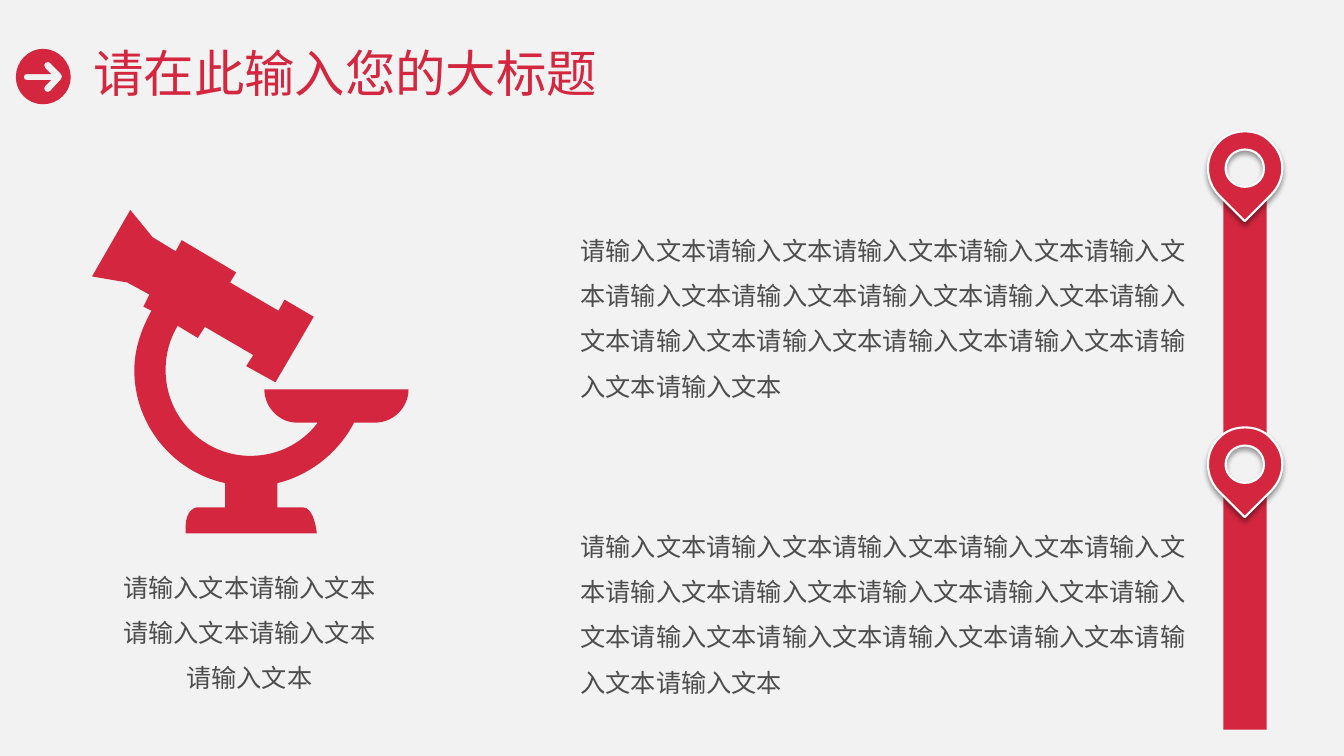
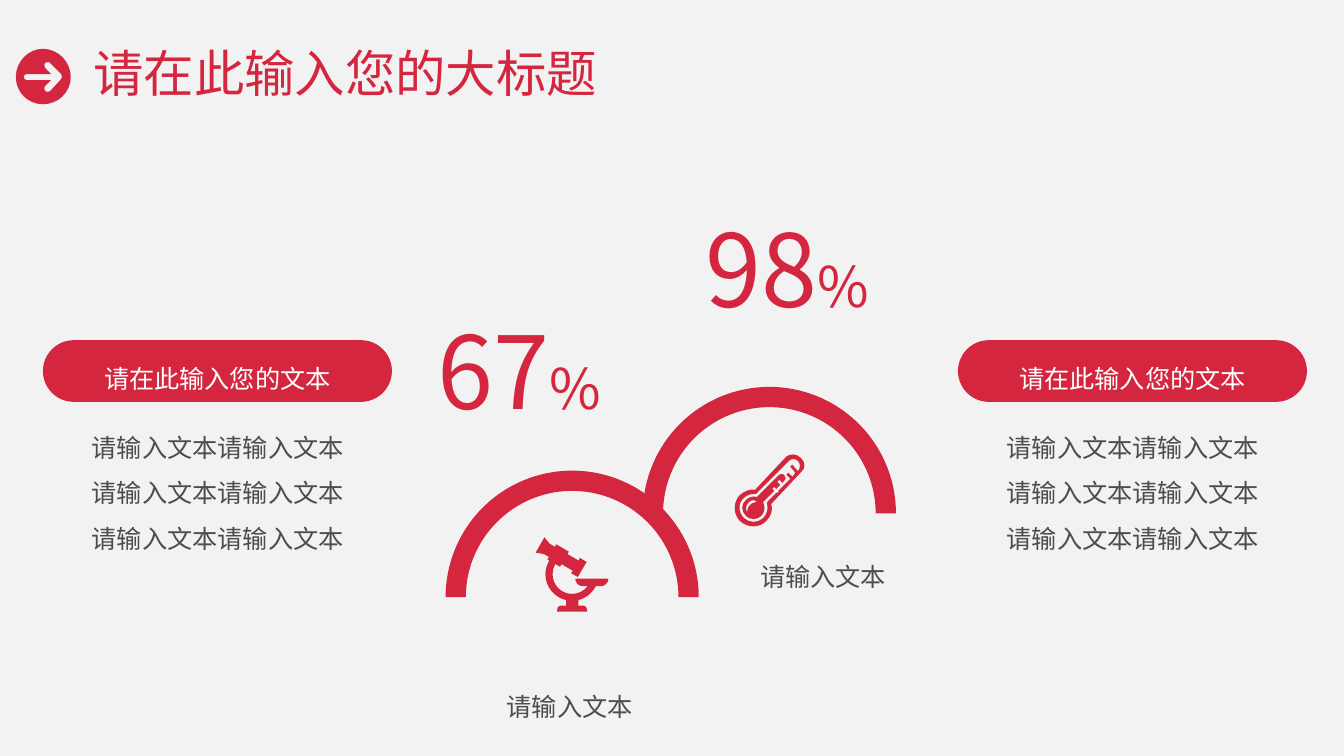
from dataclasses import dataclass

from lxml.etree import Element, SubElement
from pptx import Presentation
from pptx.dml.color import RGBColor as Rgb
from pptx.enum.shapes import MSO_SHAPE as Kind
from pptx.enum.text import MSO_ANCHOR as Anchor, PP_ALIGN as Align
from pptx.oxml.ns import qn
from pptx.util import Cm, Pt


@dataclass(frozen=True)
class Theme:
    red: str = "D4263F"
    grey: str = "4D4D4D"
    white: str = "FEFFFF"
    back: str = "F2F2F2"
    face: str = "Noto Sans CJK SC"
    title: int = 36
    body: int = 18
    figure: int = 72
    sign: int = 40


T = Theme()

# All boxes are left, top, width, height in centimetres.
WIDE, HIGH = 33.87, 19.05
TITLE = "请在此输入您的大标题"
HEAD = "请在此输入您的文本"
WORDS = "请输入文本"

RAIL = {"texts": [WORDS * 16, WORDS * 16], "step": 7.46}
CAPTION = (WORDS * 5, (2.82, 13.84, 6.93, 3.81))

# Icon outlines: a pair is a corner, six numbers are a Bezier curve.
UNIT = 0.0254
BADGE = [
    [(32, 13), (31, 13, 30, 13, 29, 14), (28, 15, 28, 17, 29, 19), (35, 25),
     (11, 25), (9, 25, 8, 26, 8, 28), (8, 30, 9, 31, 11, 31), (35, 31),
     (29, 37), (28, 38, 28, 40, 29, 42), (31, 43, 33, 43, 34, 42), (45, 30),
     (46, 29, 46, 26, 45, 25), (34, 14), (33, 13, 33, 13, 32, 13)],
    [(27, 0), (42, 0, 54.5, 13, 54.5, 28), (54.5, 43, 42, 55, 27, 55),
     (12, 55, 0, 43, 0, 28), (0, 13, 12, 0, 27, 0)],
]
PIN = [
    [(37, 18), (27, 18, 18, 26, 18, 37), (18, 47, 27, 55, 37, 55),
     (48, 55, 56, 47, 56, 37), (56, 26, 48, 18, 37, 18)],
    [(37, 0), (47, 0, 56, 3, 63, 11), (78, 25, 78, 48, 63, 63), (37, 89),
     (11, 63), (-3, 48, -3, 25, 11, 11), (18, 3, 28, 0, 37, 0)],
]
SCOPE = [
    [(153, 155), (160, 144), (112, 116), (105, 127), (85, 115),
     (77, 128, 73, 143, 73, 159), (73, 206, 111, 244, 157, 244),
     (185, 244, 209, 231, 224, 211), (203, 211),
     (186, 211, 171, 196, 171, 178), (314, 178),
     (314, 196, 299, 211, 281, 211), (260, 211),
     (245, 240, 217, 263, 184, 271), (184, 295), (209, 295),
     (221, 295, 223, 321, 223, 321), (93, 321),
     (93, 321, 90, 295, 106, 295), (132, 295), (132, 271),
     (81, 260, 42, 214, 42, 159), (42, 138, 49, 118, 59, 100),
     (51, 96), (57, 84), (35, 72), (0, 66), (38, 0), (60, 27), (83, 41),
     (89, 30), (143, 62), (137, 72), (185, 100), (191, 89), (220, 106),
     (182, 171)],
]
THERMO = [
    [(68, 18), (38, 50), (40, 56, 38, 62, 33, 67), (26, 74, 15, 74, 7, 67),
     (0, 60, 0, 48, 7, 41), (12, 37, 17, 35, 22, 36), (53, 3),
     (57, 0, 63, 0, 67, 4), (68, 5), (72, 9, 72, 15, 68, 18)],
    [(65, 8), (64, 7), (62, 5, 58, 5, 56, 7), (25, 38),
     (25, 40, 22, 40, 22, 40), (18, 40, 14, 41, 11, 44),
     (5, 49, 5, 58, 11, 64), (16, 69, 25, 69, 30, 64),
     (34, 60, 35, 55, 34, 50), (34, 50, 33, 48, 35, 47), (43, 39), (44, 39),
     (46, 37), (45, 37), (49, 33), (51, 31), (57, 25), (53, 21), (55, 19),
     (59, 23), (62, 19), (57, 13), (59, 11), (64, 17), (65, 17),
     (67, 14, 67, 10, 65, 8)],
    [(49, 29), (46, 26), (44, 28), (47, 31), (43, 35), (41, 33), (39, 35),
     (41, 37), (30, 48), (32, 53, 32, 58, 28, 62), (24, 66, 17, 66, 13, 62),
     (8, 57, 8, 50, 13, 46), (16, 43, 20, 42, 24, 43), (46, 21),
     (47, 20, 49, 20, 51, 21), (51, 22), (53, 23, 53, 25, 51, 27)],
    [(16, 48), (11, 52, 14, 59, 14, 58), (15, 48, 24, 48, 24, 48),
     (24, 48, 20, 44, 16, 48)],
]

# Arc corner, icon and its size, figure and its box, label corner.
GAUGES = [
    ((16.2, 9.75), THERMO, 1, "98", (16.74, 5.21, 6.2, 3.07), (17.61, 13.54)),
    ((11.23, 11.86), SCOPE, 0.23, "67", (9.98, 7.77, 6.2, 3.38),
     (11.22, 16.83)),
]
PANELS = [(1.1, HEAD, WORDS * 6), (24.16, HEAD, WORDS * 6)]


def cms(box):
    return [Cm(n) for n in box]


def tint(shape, color=T.red, line=None, width=1):
    shape.shadow.inherit = False
    shape.fill.solid()
    shape.fill.fore_color.rgb = Rgb.from_string(color)
    if line:
        shape.line.color.rgb = Rgb.from_string(line)
        shape.line.width = Pt(width)
    else:
        shape.line.fill.background()
    return shape


def block(slide, kind, box, **style):
    return tint(slide.shapes.add_shape(kind, *cms(box)), **style)


def bend(shape, items, left, top):
    """Turn the straight segments that stand for curves into curves."""
    nodes = list(shape._element.iter(qn("a:moveTo"), qn("a:lnTo")))
    for node, item in zip(nodes, items):
        if len(item) == 6:
            curve = Element(qn("a:cubicBezTo"))
            for x, y in zip(item[::2], item[1::2]):
                SubElement(curve, qn("a:pt"), x=str(x - left), y=str(y - top))
            node.getparent().replace(node, curve)


def icon(slide, paths, left, top, size=1.0, **style):
    paths = [[cms(n * UNIT * size for n in item) for item in path]
             for path in paths]
    pen = None
    for path in paths:
        ends = [item[-2:] for item in path]
        if pen is None:
            pen = slide.shapes.build_freeform(*ends[0], scale=1.0)
        else:
            pen.move_to(*ends[0])
        pen.add_line_segments(ends[1:], close=True)
    shape = pen.convert_to_shape(Cm(left), Cm(top))
    items = [item for path in paths for item in path]
    bend(shape, items, min(i[-2] for i in items), min(i[-1] for i in items))
    return tint(shape, **style)


def shade(shape):
    """Cast a soft shadow straight down."""
    effects = shape._element.spPr.find(qn("a:effectLst"))
    outer = SubElement(effects, qn("a:outerShdw"), blurRad=str(Pt(4)),
                       dist=str(Pt(3)), dir="5400000", algn="t",
                       rotWithShape="0")
    black = SubElement(outer, qn("a:srgbClr"), val="000000")
    SubElement(black, qn("a:alpha"), val="40000")


def write(shape, text, size=T.body, color=T.grey, align=Align.CENTER,
          gap=1.5):
    frame = shape.text_frame
    frame.word_wrap = True
    frame.vertical_anchor = Anchor.MIDDLE
    para = frame.paragraphs[0]
    para.add_run().text = text
    para.alignment = align
    para.line_spacing = gap
    font = para.font
    font.name = T.face
    font.size = Pt(size)
    font.color.rgb = Rgb.from_string(color)
    SubElement(font._element, qn("a:ea"), typeface=T.face)
    return frame


def note(slide, box, text, **style):
    return write(slide.shapes.add_textbox(*cms(box)), text, **style)


def figure(slide, box, value):
    frame = note(slide, box, value, size=T.figure, color=T.red, gap=1.0)
    frame.vertical_anchor = Anchor.TOP
    frame.margin_left = frame.margin_right = 0
    frame.margin_top = frame.margin_bottom = 0
    sign = frame.paragraphs[0].add_run()
    sign.text = "%"
    sign.font.size = Pt(T.sign)


def dress(slide):
    """Give the layout of the slide its backdrop and title badge."""
    tree = slide.slide_layout.shapes._spTree
    back = block(slide, Kind.RECTANGLE, (0, 0, WIDE, HIGH), color=T.back)
    for shape in (back, icon(slide, BADGE, 0.4, 1.23)):
        tree.append(shape._element)


def page(deck):
    slide = deck.slides.add_slide(deck.slide_layouts[6])
    if len(deck.slides) == 1:
        dress(slide)
    note(slide, (2.1, 0.74, 27.89, 2.36), TITLE, size=T.title,
         color=T.red, align=Align.LEFT, gap=0.9)
    return slide


def rail(deck):
    slide = page(deck)
    for i, text in enumerate(RAIL["texts"]):
        down = i * RAIL["step"]
        block(slide, Kind.RECTANGLE, (30.83, 4.83 + down, 1.09, 6.1))
        if i == 0:
            icon(slide, SCOPE, 2.32, 5.29)
        note(slide, (14.38, 4.84 + down, 16.03, 5.97), text, align=Align.LEFT)
        shade(icon(slide, PIN, 30.43, 3.31 + down, line=T.white, width=1.5))
    text, box = CAPTION
    note(slide, box, text)


def gauges(deck):
    slide = page(deck)
    for (left, top), paths, size, value, box, spot in GAUGES:
        arc = block(slide, Kind.BLOCK_ARC, (left, top, 6.38, 6.38))
        for i, level in enumerate((108, 0, 0.08)):
            arc.adjustments[i] = level
        icon(slide, paths, left + 2.27, top + 1.68, size)
        figure(slide, box, value)
        note(slide, (*spot, 6.27, 1.57), WORDS)
    for left, head, text in PANELS:
        pill = block(slide, Kind.ROUNDED_RECTANGLE,
                     (left, 8.59, 8.76, 1.52), line=T.red)
        pill.adjustments[0] = 0.5
        write(pill, head, color=T.white)
        note(slide, (left + 0.88, 10.35, 7.01, 3.76), text)


def main():
    deck = Presentation()
    deck.slide_width, deck.slide_height = Cm(WIDE), Cm(HIGH)
    rail(deck)
    gauges(deck)
    deck.save("out.pptx")


if __name__ == "__main__":
    main()
